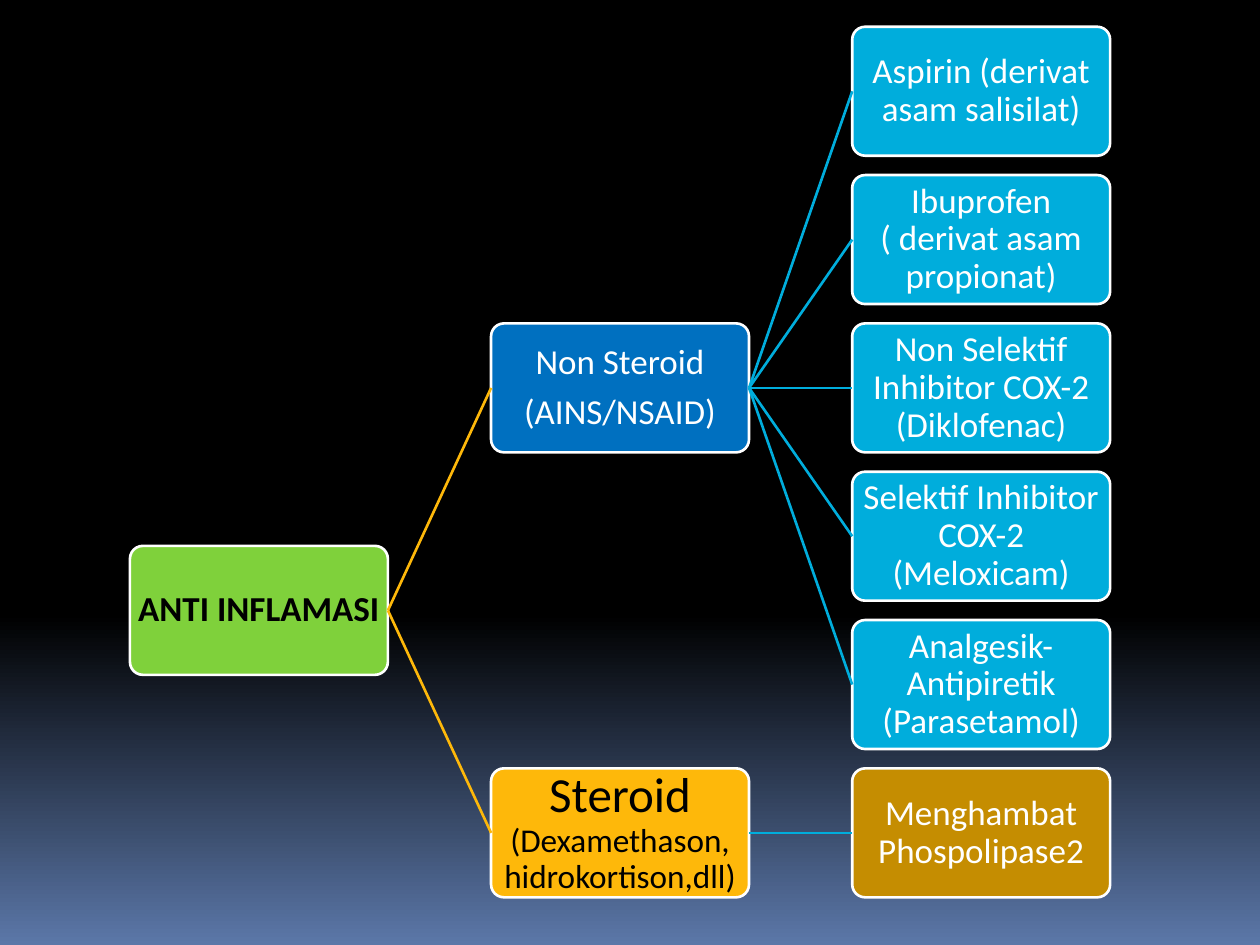
from dataclasses import dataclass

import lxml.etree
import pptx
import pptx.dml.color
import pptx.enum.shapes
import pptx.enum.text
import pptx.oxml.ns
import pptx.util

Cm, Pt = pptx.util.Cm, pptx.util.Pt

COLOURS = {
    "black": "000000",
    "dusk": "5B77A8",
    "white": "FFFFFF",
    "green": "7FD13B",
    "blue": "0070C0",
    "cyan": "00ADDC",
    "amber": "FEB80A",
    "ochre": "C58D01",
}
BOX_WIDTH, BOX_HEIGHT = 5.2, 2.6
COLUMN_PITCH, ROW_PITCH = 7.28, 2.99


@dataclass
class Drug:
    """One box of the tree; each paragraph is a list of (text, size) runs."""
    paragraphs: list
    fill: str
    ink: str = "white"
    bold: bool = False
    branch_line: str = "cyan"
    children: tuple = ()


def rgb(name):
    """Return the named colour."""
    return pptx.dml.color.RGBColor.from_string(COLOURS[name])


def plain(label, fill="cyan"):
    """Return an end box with a single 20 pt label."""
    return Drug([[(label, 20)]], fill)


ANTI_INFLAMMATORIES = Drug(
    [[("ANTI INFLAMASI", 20)]], "green", "black", True, "amber",
    (
        Drug([[("Non Steroid", 20)], [("(AINS/NSAID)", 20)]], "blue", children=(
            plain("Aspirin (derivat asam salisilat)"),
            plain("Ibuprofen ( derivat asam propionat)"),
            plain("Non Selektif Inhibitor COX-2 (Diklofenac)"),
            plain("Selektif Inhibitor COX-2 (Meloxicam)"),
            plain("Analgesik-Antipiretik (Parasetamol)"),
        )),
        Drug([[("Steroid", 28), (" (Dexamethason, hidrokortison,dll)", 19)]],
             "amber", "black",
             children=(plain("Menghambat Phospolipase2", "ochre"),)),
    ),
)


def paint_background(slide):
    """Fill the slide with black fading to blue at the bottom."""
    fill = slide.background.fill
    fill.gradient()
    fill.gradient_angle = 270
    for stop, position, name in zip(fill.gradient_stops, (0.65, 1), ("black", "dusk")):
        stop.position = position
        stop.color.rgb = rgb(name)


def add_box(slide, drug, left, top):
    """Add one rounded, labelled box at a place given in centimetres."""
    box = slide.shapes.add_shape(
        pptx.enum.shapes.MSO_SHAPE.ROUNDED_RECTANGLE,
        Cm(left), Cm(top), Cm(BOX_WIDTH), Cm(BOX_HEIGHT))
    box.adjustments[0] = 0.1
    box.shadow.inherit = False
    box.fill.solid()
    box.fill.fore_color.rgb = rgb(drug.fill)
    box.line.color.rgb = rgb("white")
    box.line.width = Pt(1.5)
    frame = box.text_frame
    frame.word_wrap = True
    frame.vertical_anchor = pptx.enum.text.MSO_ANCHOR.MIDDLE
    frame.margin_left = frame.margin_right = Cm(0.03)
    frame.margin_top = frame.margin_bottom = Cm(0.03)
    for index, runs in enumerate(drug.paragraphs):
        paragraph = frame.add_paragraph() if index else frame.paragraphs[0]
        paragraph.alignment = pptx.enum.text.PP_ALIGN.CENTER
        paragraph.line_spacing = 0.9
        paragraph.space_after = Pt(7)
        paragraph.font.name = "Calibri"
        paragraph.font.bold = drug.bold
        paragraph.font.color.rgb = rgb(drug.ink)
        paragraph.font.size = Pt(runs[0][1])
        for text, size in runs:
            run = paragraph.add_run()
            run.text = text
            if size != runs[0][1]:
                run.font.size = Pt(size)
    return box


def link(slide, parent, child, colour):
    """Join the right side of a parent box to the left side of its child."""
    branch = slide.shapes.add_connector(
        pptx.enum.shapes.MSO_CONNECTOR.STRAIGHT, 0, 0, 0, 0)
    branch.begin_connect(parent, 3)
    branch.end_connect(child, 1)
    branch.line.color.rgb = rgb(colour)
    branch.line.width = Pt(1.5)
    lxml.etree.SubElement(branch.element.spPr, pptx.oxml.ns.qn("a:effectLst"))


def place_tree(slide, drug, left, top):
    """Place a drug and its descendants; return its box, its top and the next free top."""
    placed, next_top = [], top
    for child in drug.children:
        child_box, child_top, next_top = place_tree(
            slide, child, left + COLUMN_PITCH, next_top)
        placed.append((child_box, child_top))
    if placed:
        top = (placed[0][1] + placed[-1][1]) / 2
    else:
        next_top = top + ROW_PITCH
    box = add_box(slide, drug, left, top)
    for child_box, _ in placed:
        link(slide, box, child_box, drug.branch_line)
    return box, top, next_top


def main():
    """Build and save the slide."""
    deck = pptx.Presentation()
    deck.slide_width, deck.slide_height = Cm(25.4), Cm(19.05)
    slide = deck.slides.add_slide(deck.slide_layouts[6])
    paint_background(slide)
    place_tree(slide, ANTI_INFLAMMATORIES, 2.62, 0.54)
    deck.save("out.pptx")


if __name__ == "__main__":
    main()
